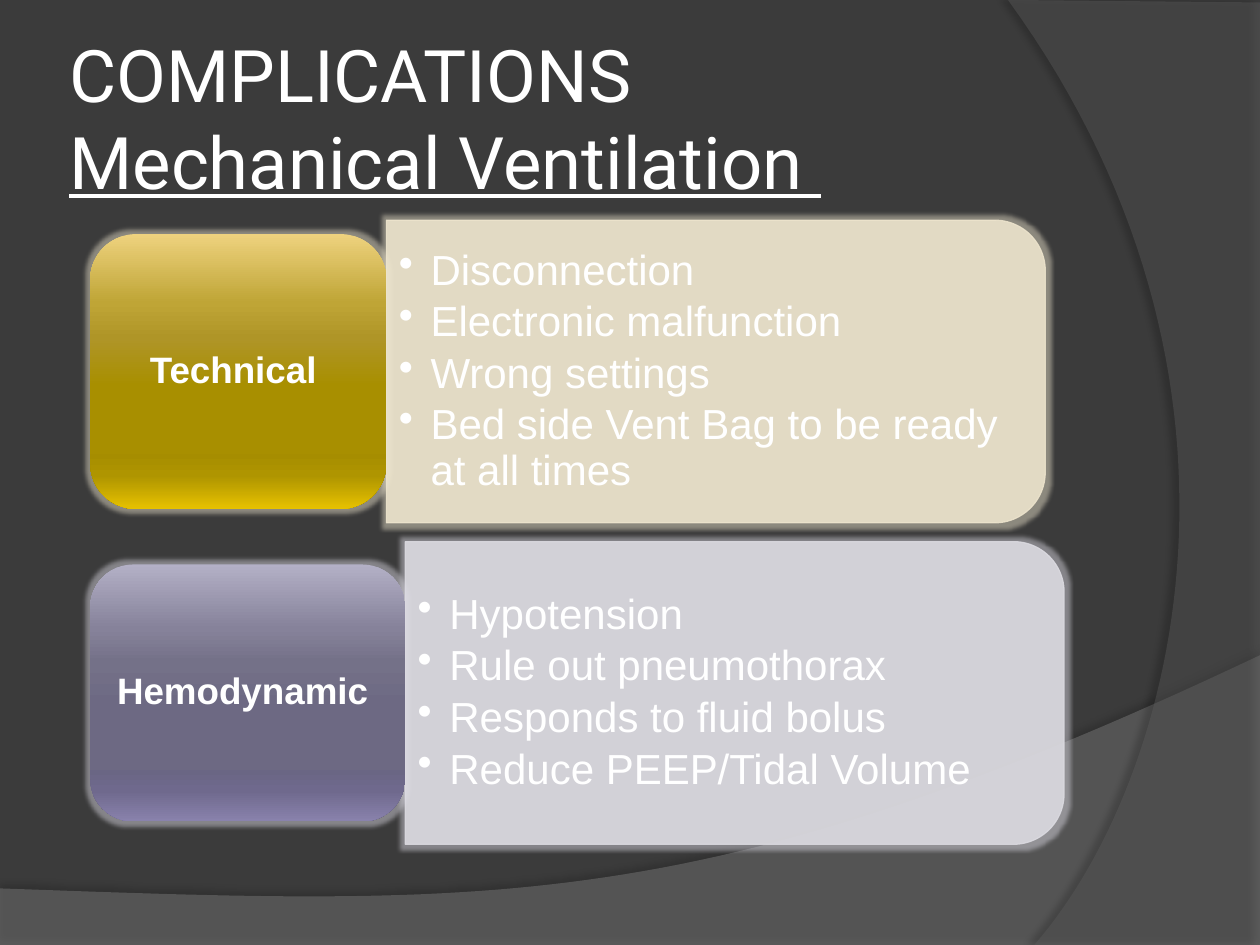
from lxml.etree import SubElement
from pptx import Presentation
from pptx.dml.color import RGBColor
from pptx.enum.shapes import MSO_SHAPE
from pptx.enum.text import MSO_ANCHOR, PP_ALIGN
from pptx.oxml.ns import qn
from pptx.util import Cm, Pt

WHITE = "FFFFFF"
ROWS = [
    {"label": "Technical ", "top": 4.44, "label_width": 5.97, "label_height": 5.54,
     "panel": "ECE3CC", "glow": "F0E8D0",
     "stops": ["EED27E", "BFA536", "AF9527", "A88F00", "A68D00", "AF9500", "E6C100"],
     "items": ["Disconnection", "Electronic malfunction", "Wrong settings",
               "Bed side Vent Bag to be ready at all times"]},
    {"label": "Hemodynamic ", "top": 10.92, "label_width": 6.35, "label_height": 5.18,
     "panel": "DBDAE0", "glow": "E0DEE8",
     "stops": ["B3B0C6", "86829A", "747188", "6D6983", "6A6684", "6F698D", "8982AC"],
     "items": ["Hypotension", "Rule out pneumothorax", "Responds to fluid bolus",
               "Reduce PEEP/Tidal Volume"]},
]
STOP_POSITIONS = [0, 25, 38, 55, 80, 88, 100]
PANEL_WIDTH, PANEL_HEIGHT = 13.28, 6.1


def color(value):
    return RGBColor.from_string(value)


def set_alpha(fill_parent, percent):
    """Make the solid fill under an XML element partly transparent."""
    rgb = fill_parent.find(qn("a:solidFill")).find(qn("a:srgbClr"))
    SubElement(rgb, qn("a:alpha"), val=str(percent * 1000))


def add_effect(shape, tag, value, alpha, **attributes):
    shape.shadow.inherit = False
    effects = shape.element.spPr.find(qn("a:effectLst"))
    effect = SubElement(effects, qn(tag), {k: str(v) for k, v in attributes.items()})
    rgb = SubElement(effect, qn("a:srgbClr"), val=value)
    SubElement(rgb, qn("a:alpha"), val=str(alpha * 1000))


def add_text_box(slide, left, top, width, height, insets=(0.25, 0.13)):
    box = slide.shapes.add_textbox(Cm(left), Cm(top), Cm(width), Cm(height))
    frame = box.text_frame
    frame.word_wrap = True
    frame.vertical_anchor = MSO_ANCHOR.MIDDLE
    frame.margin_left = frame.margin_right = Cm(insets[0])
    frame.margin_top = frame.margin_bottom = Cm(insets[1])
    return frame


def add_run(paragraph, text, size, font="Arial", bold=False, underline=False):
    run = paragraph.add_run()
    run.text = text
    run.font.name, run.font.size = font, Pt(size)
    run.font.bold, run.font.underline = bold, underline
    run.font.color.rgb = color(WHITE)


def curve_points(start, control1, control2, end, steps=60):
    """Points along a cubic curve."""
    for step in range(steps + 1):
        t = step / steps
        weights = ((1 - t) ** 3, 3 * t * (1 - t) ** 2, 3 * t * t * (1 - t), t ** 3)
        yield tuple(sum(w * p[axis] for w, p in
                        zip(weights, (start, control1, control2, end)))
                    for axis in (0, 1))


def add_swoosh(slide, corners, curve, fill, alpha, shadow_alpha, distance, angle):
    points = [(Cm(x), Cm(y)) for x, y in corners + list(curve_points(*curve))]
    builder = slide.shapes.build_freeform(*points[0])
    builder.add_line_segments(points[1:], close=True)
    shape = builder.convert_to_shape()
    shape.fill.solid()
    shape.fill.fore_color.rgb = color(fill)
    set_alpha(shape.element.spPr, alpha)
    shape.line.fill.background()
    add_effect(shape, "a:outerShdw", "000000", shadow_alpha, blurRad=Pt(4),
               dist=Pt(distance), dir=angle * 60000, algn="ctr", rotWithShape=0)


def add_background(slide, width, height):
    slide.background.fill.solid()
    slide.background.fill.fore_color.rgb = color("3B3B3B")
    # Wave along the bottom
    add_swoosh(slide, [(0, 17.91), (0, height), (width, height)],
               ((width, 13.21), (14.2, 18.52), (9.93, 18.26), (0, 17.91)),
               "7F7F7F", 45, 35, 3.5, 270)
    # Arc on the right
    add_swoosh(slide, [(width, 0.05), (width, height)],
               ((20.85, height), (23.75, 15.72), (25.86, 7.62), (20.32, 0)),
               "5E5E5E", 40, 45, 4, 180)


def add_title(slide, left, top, width, height):
    frame = add_text_box(slide, left, top, width, height, (0.13, 0.13))
    paragraph = frame.paragraphs[0]
    add_run(paragraph, "COMPLICATIONS ", 41.4, "Roboto")
    paragraph.add_line_break()
    add_run(paragraph, "Mechanical Ventilation ", 41.4, "Roboto", underline=True)


def add_panel(slide, row, left, top, width, height):
    # The preset is rounded at the top, so a quarter turn rounds its right side
    shape = slide.shapes.add_shape(
        MSO_SHAPE.ROUND_2_SAME_RECTANGLE, Cm(left + (width - height) / 2),
        Cm(top + (height - width) / 2), Cm(height), Cm(width))
    shape.rotation = 90
    shape.fill.solid()
    shape.fill.fore_color.rgb = color(row["panel"])
    shape.line.color.rgb = color(row["panel"])
    shape.line.width = Pt(0.75)
    properties = shape.element.spPr
    set_alpha(properties, 90)
    set_alpha(properties.find(qn("a:ln")), 90)
    add_effect(shape, "a:glow", row["glow"], 45, rad=Pt(5))

    # Bullets
    frame = add_text_box(slide, left, top + 0.3, width - 0.3, height - 0.6)
    for index, item in enumerate(row["items"]):
        paragraph = frame.add_paragraph() if index else frame.paragraphs[0]
        paragraph.line_spacing = 0.9
        paragraph.space_after = Pt(3.6)
        properties = paragraph._p.get_or_add_pPr()
        properties.set("marL", str(Cm(0.64)))
        properties.set("indent", str(-Cm(0.64)))
        SubElement(properties, qn("a:buChar"), char="•")
        add_run(paragraph, item, 24)


def add_label(slide, row, left, top, width, height):
    shape = slide.shapes.add_shape(MSO_SHAPE.ROUNDED_RECTANGLE,
                                   Cm(left), Cm(top), Cm(width), Cm(height))
    shape.fill.gradient()
    shape.fill.gradient_angle = 270
    stops = shape.element.spPr.find(qn("a:gradFill")).find(qn("a:gsLst"))
    for stop in list(stops):
        stops.remove(stop)
    for position, value in zip(STOP_POSITIONS, row["stops"]):
        stop = SubElement(stops, qn("a:gs"), pos=str(position * 1000))
        SubElement(stop, qn("a:srgbClr"), val=value)
    shape.line.fill.background()
    add_effect(shape, "a:glow", row["glow"], 45, rad=Pt(5))

    # Caption
    frame = add_text_box(slide, left + 0.26, top + 0.26, width - 0.52,
                         height - 0.52, (0.23, 0.1))
    paragraph = frame.paragraphs[0]
    paragraph.alignment = PP_ALIGN.CENTER
    paragraph.line_spacing = 0.9
    add_run(paragraph, row["label"], 21, bold=True)


def add_row(slide, row, left):
    add_panel(slide, row, left + row["label_width"], row["top"],
              PANEL_WIDTH, PANEL_HEIGHT)
    label_top = row["top"] + (PANEL_HEIGHT - row["label_height"]) / 2
    add_label(slide, row, left, label_top, row["label_width"], row["label_height"])


def main():
    presentation = Presentation()
    presentation.slide_width, presentation.slide_height = Cm(25.4), Cm(19.05)
    slide = presentation.slides.add_slide(presentation.slide_layouts[6])
    add_background(slide, 25.4, 19.05)
    add_title(slide, 1.27, 0.76, 20.75, 3.18)
    for row in ROWS:
        add_row(slide, row, 1.82)
    presentation.save("out.pptx")


if __name__ == "__main__":
    main()
